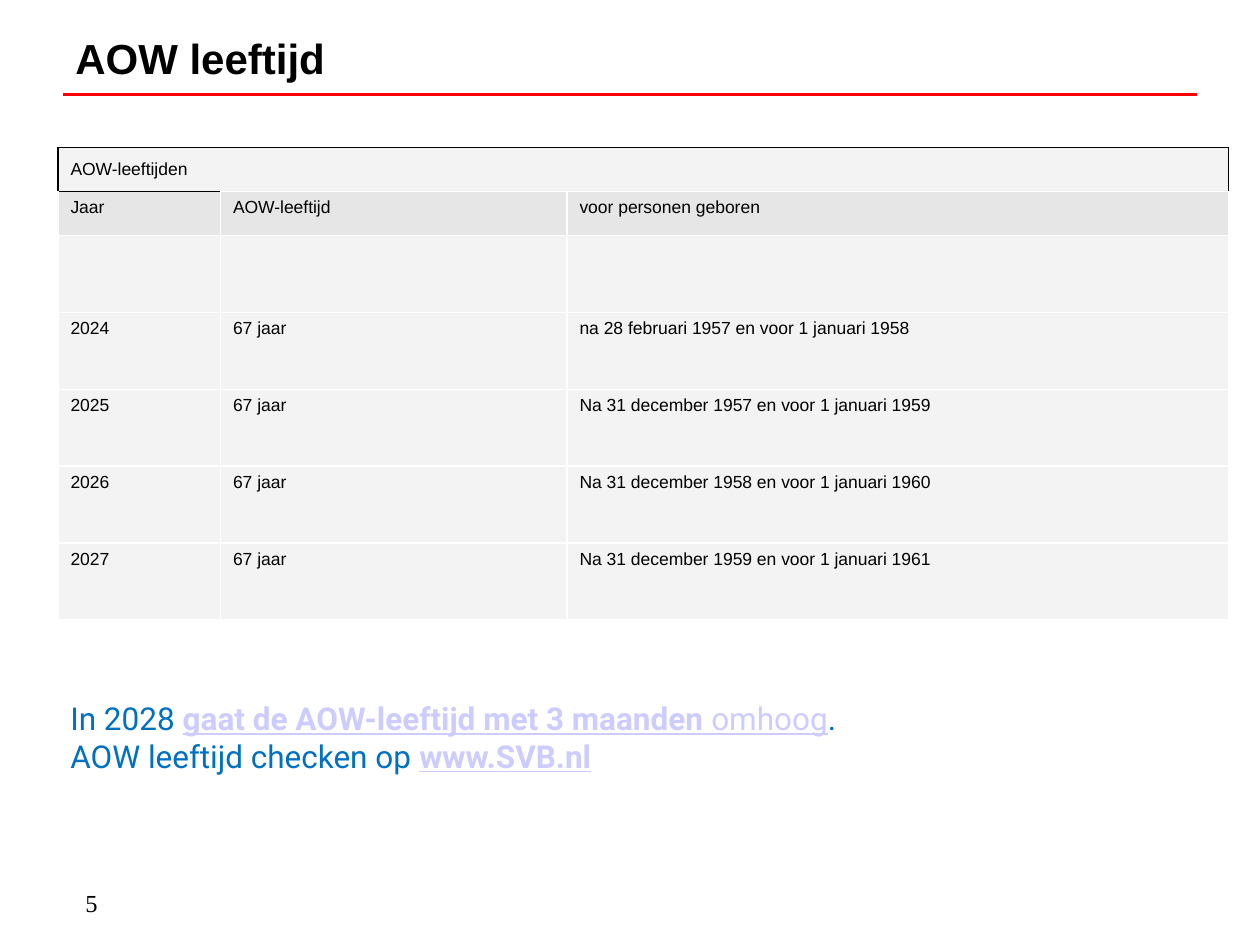
from lxml import etree
from pptx import Presentation
from pptx.dml.color import RGBColor
from pptx.enum.shapes import MSO_CONNECTOR
from pptx.enum.text import MSO_ANCHOR
from pptx.oxml.ns import qn
from pptx.util import Inches, Pt

STRAIGHT = MSO_CONNECTOR.STRAIGHT
MIDDLE = MSO_ANCHOR.MIDDLE
TOP = MSO_ANCHOR.TOP

COLORS = {
    "black": "000000",
    "white": "FFFFFF",
    "rule": "FF0000",
    "row": "F3F3F3",
    "head": "E6E6E6",
    "note": "0070C0",
    "link": "CCCCFF",
}
COLUMN_WIDTHS = [1.29, 2.75, 5.25]
ROW_HEIGHTS = [0.35] * 2 + [0.61] * 5
AGES = [
    ["AOW-leeftijden", "", ""],
    ["Jaar", "AOW-leeftijd", "voor personen geboren"],
    ["", "", ""],
    ["2024", "67 jaar", "na 28 februari 1957 en voor 1 januari 1958"],
    ["2025", "67 jaar", "Na 31 december 1957 en voor 1 januari 1959"],
    ["2026", "67 jaar", "Na 31 december 1958 en voor 1 januari 1960"],
    ["2027", "67 jaar", "Na 31 december 1959 en voor 1 januari 1961"],
]
NOTE = [
    [
        ("In 2028 ", False, False),
        ("gaat de AOW-leeftijd met 3 maanden ", True, True),
        ("omhoog", True, False),
        (".", False, False),
    ],
    [("AOW leeftijd checken op ", False, False), ("www.SVB.nl", True, True)],
]


def rgb(name):
    return RGBColor.from_string(COLORS[name])


def style(font, face, size, color, bold=False):
    font.name = face
    font.size = Pt(size)
    font.color.rgb = rgb(color)
    font.bold = bold


def add_box(slide, left, top, width, height, anchor=TOP):
    box = slide.shapes.add_textbox(
        Inches(left), Inches(top), Inches(width), Inches(height)
    )
    frame = box.text_frame
    frame.word_wrap = True
    frame.vertical_anchor = anchor
    return frame


def add_heading(slide, left, top, width, height):
    rule_top = Inches(top + 0.75)
    rule = slide.shapes.add_connector(
        STRAIGHT, Inches(left), rule_top, Inches(left + 9), rule_top
    )
    rule.line.color.rgb = rgb("rule")
    rule.line.width = Pt(2)
    etree.SubElement(rule._element.spPr, qn("a:effectLst"))
    title = add_box(slide, left, top, width, height, MIDDLE).paragraphs[0]
    title.text = "AOW leeftijd"
    style(title.font, "Arial", 24, "black", True)


def set_borders(cell, sides):
    properties = cell._tc.get_or_add_tcPr()
    for side in "LRTB":
        border = etree.SubElement(properties, qn("a:ln" + side), w=str(Pt(1)))
        fill = etree.SubElement(border, qn("a:solidFill"))
        etree.SubElement(fill, qn("a:srgbClr"), val=COLORS[sides.get(side, "white")])


def border_sides(row, column):
    if row == 0:
        sides = dict.fromkeys("LRT", "black")
        if column == 0:
            sides["B"] = "black"
        return sides
    return {"T": "black"} if (row, column) == (1, 0) else {}


def add_ages(slide, left, top, width, height):
    table = slide.shapes.add_table(
        len(AGES), len(COLUMN_WIDTHS),
        Inches(left), Inches(top), Inches(width), Inches(height),
    ).table
    table.first_row = False
    table.horz_banding = False
    for column, column_width in zip(table.columns, COLUMN_WIDTHS):
        column.width = Inches(column_width)
    for row, row_height in zip(table.rows, ROW_HEIGHTS):
        row.height = Inches(row_height)
    table.cell(0, 0).merge(table.cell(0, 2))
    for r, texts in enumerate(AGES):
        for c, text in enumerate(texts):
            cell = table.cell(r, c)
            set_borders(cell, border_sides(r, c))
            cell.fill.solid()
            cell.fill.fore_color.rgb = rgb("head" if r == 1 else "row")
            cell.vertical_anchor = MIDDLE if r == 0 else TOP
            if text:
                cell.text = text
                style(cell.text_frame.paragraphs[0].font, "Arial", 10, "black")


def add_note(slide, left, top, width, height):
    frame = add_box(slide, left, top, width, height)
    for index, pieces in enumerate(NOTE):
        line = frame.add_paragraph() if index else frame.paragraphs[0]
        for text, linked, bold in pieces:
            run = line.add_run()
            run.text = text
            style(run.font, "Roboto", 18, "link" if linked else "note", bold)
            run.font.underline = linked


def add_page_number(slide, left, top, width, height):
    number = add_box(slide, left, top, width, height).paragraphs[0]
    number.text = "5"
    style(number.font, "Times New Roman", 14, "black")


def main():
    deck = Presentation()
    deck.slide_width = Inches(10)
    deck.slide_height = Inches(7.5)
    slide = deck.slides.add_slide(deck.slide_layouts[6])
    add_heading(slide, 0.5, 0, 7.17, 0.92)
    add_ages(slide, 0.46, 1.17, sum(COLUMN_WIDTHS), sum(ROW_HEIGHTS))
    add_page_number(slide, 0.58, 7, 2.08, 0.33)
    add_note(slide, 0.46, 5.5, 9.04, 1.01)
    deck.save("out.pptx")


if __name__ == "__main__":
    main()
